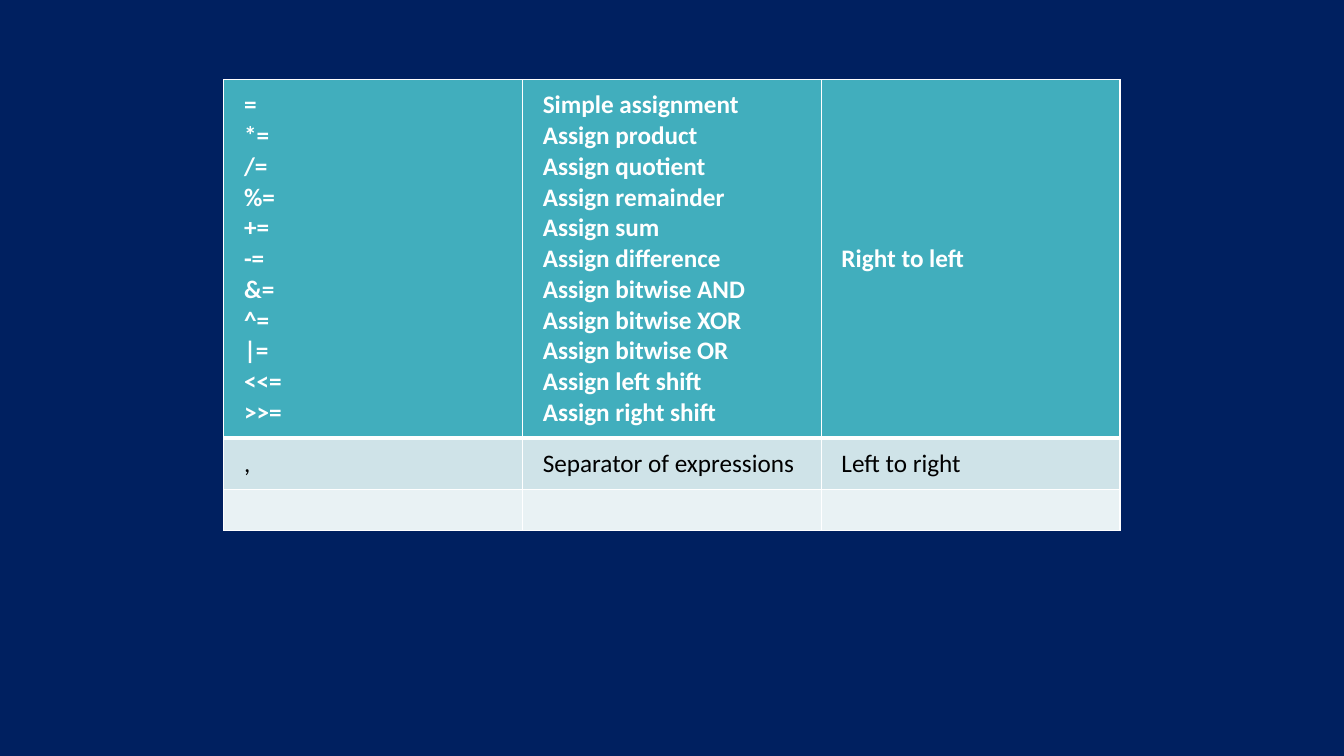
from lxml import etree
from pptx import Presentation
from pptx.dml.color import RGBColor
from pptx.enum.text import MSO_ANCHOR
from pptx.oxml.ns import qn
from pptx.util import Inches, Pt

MIDDLE = MSO_ANCHOR.MIDDLE

# Content: operator, meaning, associativity
ASSIGN = [
    ("=", "Simple assignment"),
    ("*=", "Assign product"),
    ("/=", "Assign quotient"),
    ("%=", "Assign remainder"),
    ("+=", "Assign sum"),
    ("-=", "Assign difference"),
    ("&=", "Assign bitwise AND"),
    ("^=", "Assign bitwise XOR"),
    ("|=", "Assign bitwise OR"),
    ("<<=", "Assign left shift"),
    (">>=", "Assign right shift"),
]
signs, names = zip(*ASSIGN)
ROWS = [
    ("\v".join(signs), "\v".join(names), "Right to left"),
    (",", "Separator of expressions", "Left to right"),
    ("", "", ""),
]
COLORS = {"back": "002060", "line": "FFFFFF", "head": "FFFFFF", "body": "000000"}
FILLS = ["41AEBD", "CFE3E8", "E9F2F4"]
HEIGHTS = [3.54, 0.51, 0.41]
LEFT, TOP, WIDTH = 2.22, 0.79, 8.89


def rgb(code):
    return RGBColor.from_string(code)


def add_border(cell, side, width):
    line = etree.SubElement(cell._tc.get_or_add_tcPr(), qn("a:ln" + side), w=str(Pt(width)))
    fill = etree.SubElement(line, qn("a:solidFill"))
    etree.SubElement(fill, qn("a:srgbClr"), val=COLORS["line"])


def style_cell(cell, text, row):
    # Borders come before the fill; the rule under the header is thick
    for side in "LRTB":
        thick = (row, side) in ((0, "B"), (1, "T"))
        add_border(cell, side, 3 if thick else 1)
    cell.fill.solid()
    cell.fill.fore_color.rgb = rgb(FILLS[row])
    if not text:
        return
    cell.text = text
    cell.vertical_anchor = MIDDLE
    cell.margin_left = cell.margin_right = Inches(0.2)
    cell.margin_top = cell.margin_bottom = Inches(0.1)
    font = cell.text_frame.paragraphs[0].font
    font.name, font.size, font.bold = "Calibri", Pt(18), row == 0
    font.color.rgb = rgb(COLORS["body" if row else "head"])


# Slide
prs = Presentation()
prs.slide_width, prs.slide_height = Inches(13.33), Inches(7.5)
slide = prs.slides.add_slide(prs.slide_layouts[6])
slide.background.fill.solid()
slide.background.fill.fore_color.rgb = rgb(COLORS["back"])

# Operator table
table = slide.shapes.add_table(
    len(ROWS), len(ROWS[0]),
    Inches(LEFT), Inches(TOP), Inches(WIDTH), Inches(sum(HEIGHTS)),
).table
for r, texts in enumerate(ROWS):
    table.rows[r].height = Inches(HEIGHTS[r])
    for c, text in enumerate(texts):
        style_cell(table.cell(r, c), text, r)

prs.save("out.pptx")
